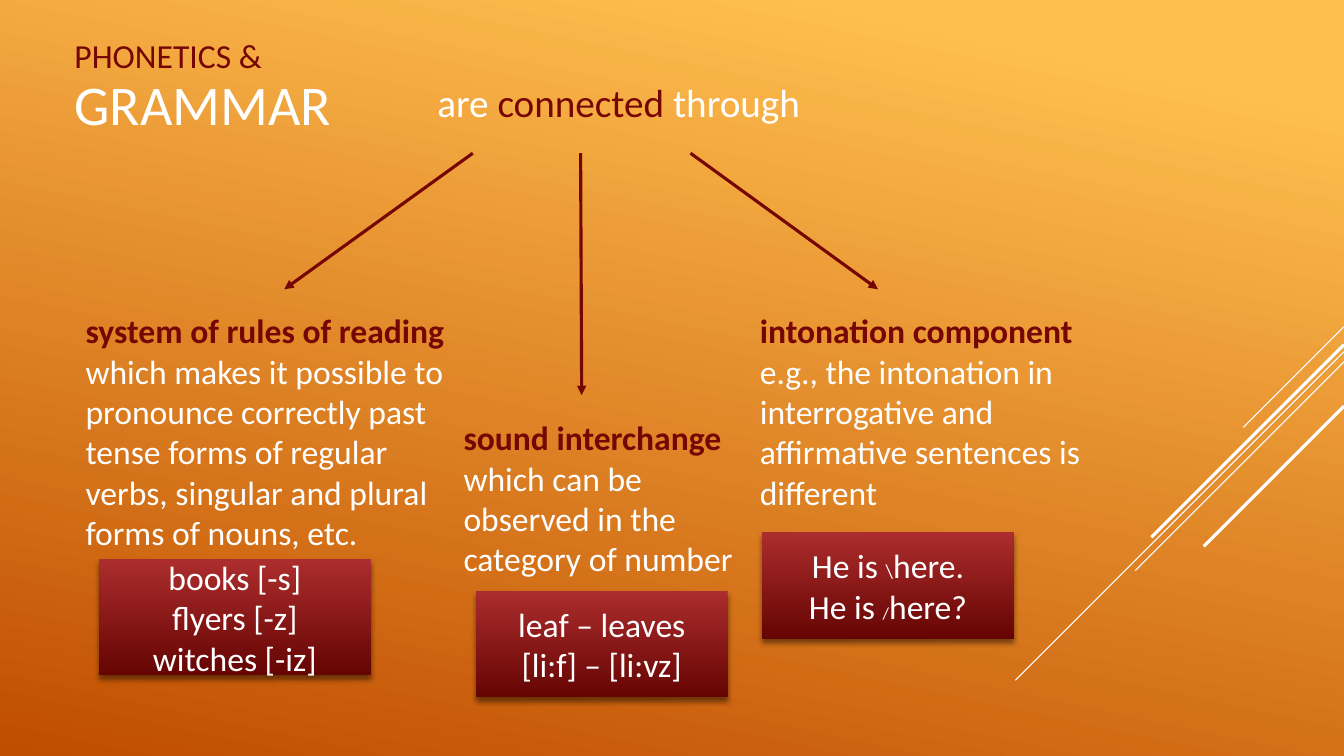
from lxml.etree import SubElement
from pptx import Presentation
from pptx.dml.color import RGBColor
from pptx.enum.shapes import MSO_CONNECTOR, MSO_SHAPE
from pptx.enum.text import MSO_ANCHOR, PP_ALIGN
from pptx.oxml.ns import qn
from pptx.util import Inches, Pt

WIDE, HIGH = Inches(13.333), Inches(7.5)
RED, WHITE = "760603", "FFFFFF"
LEFT, MID = PP_ALIGN.LEFT, PP_ALIGN.CENTER

POINTS = [
    ((5.63, 40.4, 29.48, 33.6), "system of rules of reading",
     "which makes it possible to pronounce correctly past tense forms of "
     "regular verbs, singular and plural forms of nouns, etc."),
    ((33.75, 54.53, 22.05, 22.93), "sound interchange",
     "which can be observed in the category of number"),
    ((55.8, 40.4, 25.88, 28.27), "intonation component",
     "e.g., the intonation in interrogative and affirmative sentences is different"),
]
CARDS = [
    ((35.4, 78.13, 18.75, 14.13), [[("leaf – leaves", WHITE, 24)],
                                   [("[li:f] – [li:vz]", WHITE, 24)]]),
    ((7.35, 74, 20.25, 15.33), [[("books [-s]", WHITE, 24)],
                                [("flyers [-z]", WHITE, 24)],
                                [("witches [-iz]", WHITE, 24)]]),
    ((56.7, 70.4, 18.75, 14.13),
     [[("He is ", WHITE, 24), (mark, WHITE, size), (word, WHITE, 24)]
      for mark, size, word in (("\\", 14, "here."), ("/", 12, "here?"))]),
]
ARROWS = [(35.18, 21.15, 38.27), (43.2, 43.28, 52.27), (51.38, 65.33, 38.27)]
RAYS = [(43.2, 7.5, 0.75), (46.53, 24.45, 0.75), (47.87, 15.53, 0.75),
        (45.6, 14.33, 2.25), (53.73, 10.43, 2.25)]


def paint(code):
    """Turn a hex string into a colour."""
    return RGBColor.from_string(code)


def place(x, y):
    """Turn percent shares of the slide into a point."""
    return round(WIDE * x / 100), round(HIGH * y / 100)


def area(x, y, wide, high):
    """Turn percent shares into left, top, width and height."""
    return *place(x, y), *place(wide, high)


def apply(item, look):
    """Set each attribute named in a dict."""
    for name, value in look.items():
        setattr(item, name, value)


def blend(fill, angle, *stops):
    """Fill with a linear gradient of two stops."""
    fill.gradient()
    fill.gradient_angle = angle
    for stop, (share, code) in zip(fill.gradient_stops, stops):
        stop.position = share
        stop.color.rgb = paint(code)


def write(shape, rows, look=None, para=None):
    """Write rows of (text, colour, size, bold) runs into a shape."""
    frame = shape.text_frame
    apply(frame, {"word_wrap": True, **(look or {})})
    for index, row in enumerate(rows):
        line = frame.add_paragraph() if index else frame.paragraphs[0]
        apply(line, {"alignment": LEFT, **(para or {})})
        for text, code, size, *bold in row:
            run = line.add_run()
            run.text = text
            apply(run.font, {"name": "Calibri", "size": Pt(size), "bold": bool(bold)})
            run.font.color.rgb = paint(code)


def label(slide, box, rows, look=None, para=None):
    """Add a text box."""
    write(slide.shapes.add_textbox(*area(*box)), rows, look, para)


def stroke(slide, start, end, code, width, head=False):
    """Add a straight line, with an arrowhead at its end if asked."""
    line = slide.shapes.add_connector(MSO_CONNECTOR.STRAIGHT, *place(*start), *place(*end))
    line.line.color.rgb = paint(code)
    line.line.width = Pt(width)
    if head:
        SubElement(line.line._get_or_add_ln(), qn("a:tailEnd"), type="triangle")
    SubElement(line._element.spPr, qn("a:effectLst"))


def card(slide, box, rows):
    """Add a red box with a soft shadow and centred text."""
    shape = slide.shapes.add_shape(MSO_SHAPE.RECTANGLE, *area(*box))
    blend(shape.fill, 270, (0, "AC2D2D"), (1, "650503"))
    shape.line.fill.background()
    shape.shadow.inherit = False
    effects = shape._element.spPr.find(qn("a:effectLst"))
    shade = SubElement(effects, qn("a:outerShdw"), blurRad=str(Pt(4)), dist=str(Pt(3)),
                       dir="5400000", algn="ctr", rotWithShape="0")
    tone = SubElement(shade, qn("a:srgbClr"), val="000000")
    SubElement(tone, qn("a:alpha"), val="46000")
    write(shape, rows, {"vertical_anchor": MSO_ANCHOR.MIDDLE}, {"alignment": MID})


def main():
    """Build the slide and save it."""
    deck = Presentation()
    apply(deck, {"slide_width": WIDE, "slide_height": HIGH})
    slide = deck.slides.add_slide(deck.slide_layouts[5])
    blend(slide.background.fill, 258, (0.1, "FFBF50"), (1, "C04D00"))
    for top, reach, width in RAYS:
        stroke(slide, (100, top), (100 - reach, top + reach * WIDE / HIGH), WHITE, width)
    title = slide.shapes.title
    apply(title, dict(zip(("left", "top", "width", "height"), area(4.8, 9.07, 32.7, 9.2))))
    middle = {"vertical_anchor": MSO_ANCHOR.MIDDLE}
    write(title, [[("GRAMMAR", WHITE, 40)]], middle)
    label(slide, (4.8, 4, 38.55, 6.67), [[("PHONETICS &", RED, 24)]], middle,
          {"space_before": Pt(4.8), "space_after": Pt(6)})
    label(slide, (31.8, 9.73, 28.8, 7.6),
          [[("are ", WHITE, 28), ("connected ", RED, 28), ("through", WHITE, 28)]],
          {"word_wrap": False})
    for start, end, low in ARROWS:
        stroke(slide, (start, 20.27), (end, low), RED, 2.25, True)
    for box, head, body in POINTS:
        label(slide, box, [[(head, RED, 24, True)], [(body, WHITE, 24)]])
    for box, rows in CARDS:
        card(slide, box, rows)
    deck.save("out.pptx")


if __name__ == "__main__":
    main()
